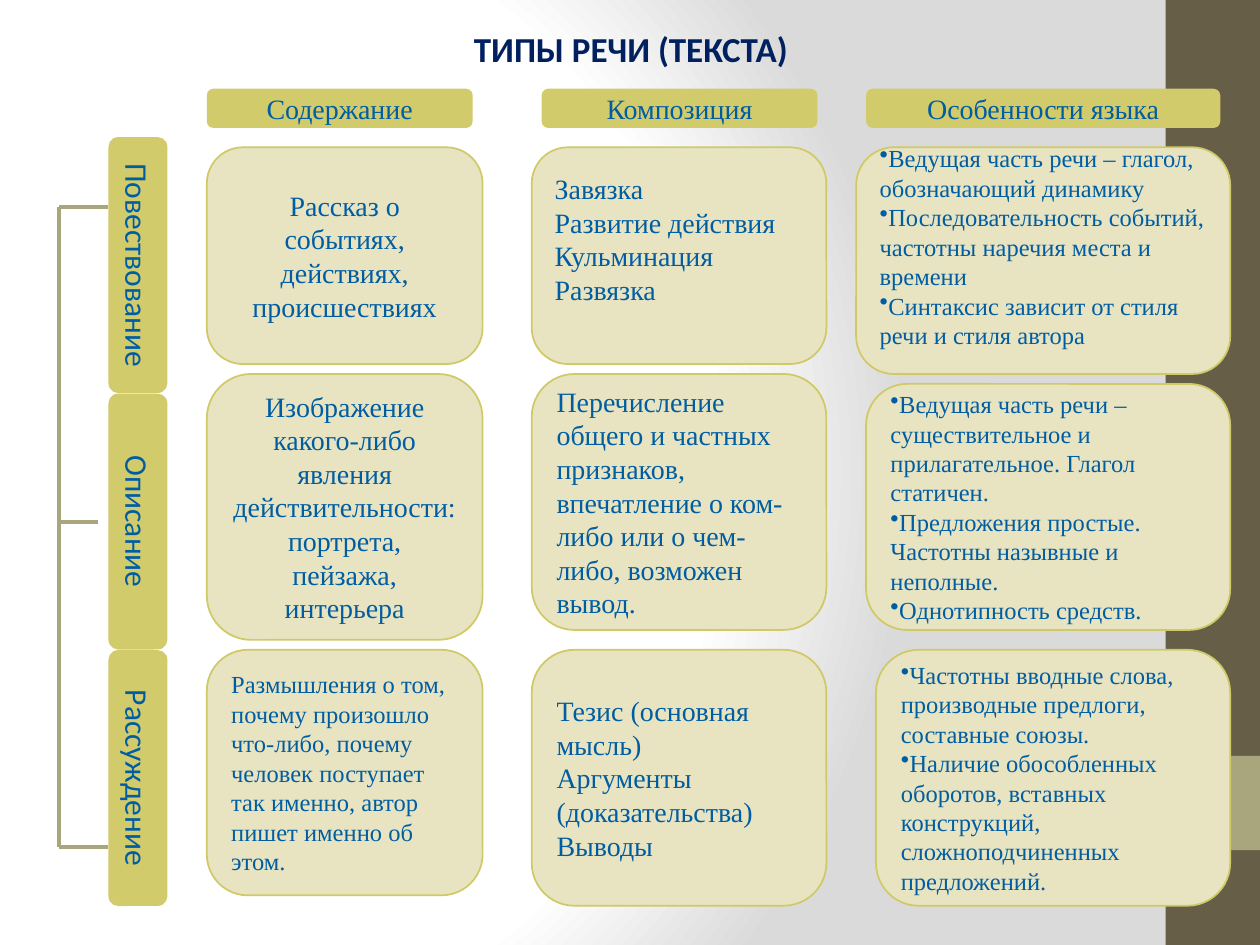
from pptx import Presentation
from pptx.dml.color import RGBColor
from pptx.enum.shapes import MSO_CONNECTOR, MSO_SHAPE
from pptx.enum.text import MSO_ANCHOR, MSO_AUTO_SIZE, PP_ALIGN
from pptx.oxml import parse_xml
from pptx.oxml.ns import nsdecls
from pptx.util import Cm, Pt
from lxml import etree

RECTANGLE = MSO_SHAPE.RECTANGLE
ROUNDED = MSO_SHAPE.ROUNDED_RECTANGLE
STRAIGHT = MSO_CONNECTOR.STRAIGHT
CENTER = PP_ALIGN.CENTER
LEFT = PP_ALIGN.LEFT
MIDDLE = MSO_ANCHOR.MIDDLE
NO_AUTO_SIZE = MSO_AUTO_SIZE.NONE

BROWN = RGBColor(0x67, 0x5E, 0x47)
SAGE = RGBColor(0xA9, 0xA5, 0x7C)
NAVY = RGBColor(0x00, 0x20, 0x60)
BLUE = RGBColor(0x00, 0x5D, 0xA2)
OLIVE = RGBColor(0xD2, 0xCB, 0x6C)
OLIVE_LINE = RGBColor(0xD0, 0xC9, 0x67)
CREAM = RGBColor(0xE8, 0xE4, 0xC1)
SERIF = "Times New Roman"
SANS = "Calibri"
DRAWING = "{http://schemas.openxmlformats.org/drawingml/2006/main}"


def write_text(shape, text, size=16, font=SERIF, color=BLUE, bold=False,
               align=CENTER, bullet=False, wrap=True):
    frame = shape.text_frame
    frame.word_wrap = wrap
    frame.auto_size = NO_AUTO_SIZE
    frame.vertical_anchor = MIDDLE
    frame.text = text
    for paragraph in frame.paragraphs:
        paragraph.alignment = align
        paragraph.font.size = Pt(size)
        for run in paragraph.runs:
            run.font.size = Pt(size)
            run.font.name = font
            run.font.bold = bold
            run.font.color.rgb = color
        if bullet:
            properties = paragraph._p.get_or_add_pPr()
            mark = etree.Element(DRAWING + "buChar", char="•")
            properties.insert_element_before(mark, "a:tabLst", "a:defRPr", "a:extLst")


def add_block(kind, left, top, width, height, fill, line=None):
    shape = slide.shapes.add_shape(kind, Cm(left), Cm(top), Cm(width), Cm(height))
    shape.shadow.inherit = False
    shape.fill.solid()
    shape.fill.fore_color.rgb = fill
    if line is None:
        shape.line.fill.background()
    else:
        shape.line.color.rgb = line
        shape.line.width = Pt(1)
    return shape


presentation = Presentation()
presentation.slide_width = Cm(25.4)
presentation.slide_height = Cm(19.05)
slide = presentation.slides.add_slide(presentation.slide_layouts[5])

background = parse_xml(
    f'<p:bg {nsdecls("p", "a")}><p:bgPr><a:gradFill rotWithShape="1"><a:gsLst>'
    '<a:gs pos="0"><a:srgbClr val="FFFFFF"/></a:gs>'
    '<a:gs pos="75000"><a:srgbClr val="FFFFFF"/></a:gs>'
    '<a:gs pos="100000"><a:srgbClr val="DADADA"/></a:gs></a:gsLst>'
    '<a:path path="circle"><a:fillToRect l="20000" t="50000" r="100000" b="50000"/></a:path>'
    '</a:gradFill><a:effectLst/></p:bgPr></p:bg>')
slide.element.cSld.insert(0, background)

add_block(RECTANGLE, 23.5, 0, 1.9, 19.05, BROWN)
add_block(RECTANGLE, 23.5, 15.24, 1.9, 1.9, SAGE)

title = slide.shapes.title
title.left, title.top, title.width, title.height = Cm(8.53), Cm(0.41), Cm(8.38), Cm(1.12)
write_text(title, "ТИПЫ РЕЧИ (ТЕКСТА)", size=20, font=SANS, color=NAVY, bold=True, wrap=False)

bracket_lines = [
    (1.19, 17.07, 1.19, 4.17),
    (1.19, 4.17, 2.18, 4.17),
    (1.19, 17.07, 2.18, 17.07),
    (1.19, 10.52, 1.98, 10.52),
]
for ends in bracket_lines:
    connector = slide.shapes.add_connector(STRAIGHT, *[Cm(value) for value in ends])
    connector.line.color.rgb = SAGE
    connector.line.width = Pt(2)
    etree.SubElement(connector._element.spPr, DRAWING + "effectLst")

for row, name in enumerate(["Повествование", "Описание", "Рассуждение"]):
    label = add_block(ROUNDED, 0.2, 4.75 + 5.17 * row, 5.16, 1.19, OLIVE)
    label.rotation = 90
    write_text(label, name, size=18, font=SANS)

headings = [
    ("Содержание", 4.17, 5.36),
    ("Композиция", 10.92, 5.56),
    ("Особенности языка", 17.46, 7.14),
]
for name, left, width in headings:
    write_text(add_block(ROUNDED, left, 1.79, width, 0.79, OLIVE), name)

content = {"left": 4.17, "width": 5.56}
composition = {"left": 10.72, "width": 5.94}
centered = {"size": 16, "align": CENTER}
plain = {"size": 16, "align": LEFT}
small = {"size": 14, "align": LEFT}
bulleted = {"size": 14, "align": LEFT, "bullet": True}
cards = [
    (content, 2.97, 4.37, 0.13, centered,
     ["Рассказ о событиях, действиях,", "происшествиях"]),
    (content, 7.54, 5.36, 0.13, centered,
     ["Изображение какого-либо явления действительности:",
      "портрета,", "пейзажа,", "интерьера"]),
    (content, 13.1, 4.95, 0.13, small,
     ["Размышления о том, почему произошло что-либо, почему человек "
      "поступает так именно, автор пишет именно об этом."]),
    (composition, 2.97, 4.37, 0.8, plain,
     ["Завязка", "Развитие действия", "Кульминация", "Развязка"]),
    (composition, 7.54, 5.16, 0.13, plain,
     ["Перечисление общего и частных признаков, впечатление о ком-либо "
      "или о чем-либо, возможен вывод."]),
    (composition, 13.1, 5.16, 0.13, plain,
     ["Тезис (основная мысль)", "Аргументы (доказательства)", "Выводы"]),
    ({"left": 17.26, "width": 7.54}, 2.97, 4.57, 0.7, bulleted,
     ["Ведущая часть речи – глагол, обозначающий динамику",
      "Последовательность событий, частотны наречия места и времени",
      "Синтаксис зависит от стиля речи и стиля автора"]),
    ({"left": 17.46, "width": 7.34}, 7.74, 4.96, 0.13, bulleted,
     ["Ведущая часть речи – существительное и прилагательное. Глагол статичен.",
      "Предложения простые. Частотны назывные и неполные.",
      "Однотипность средств."]),
    ({"left": 17.66, "width": 7.14}, 13.1, 5.16, 0.13, bulleted,
     ["Частотны вводные слова, производные предлоги, составные союзы.",
      "Наличие обособленных оборотов, вставных конструкций, "
      "сложноподчиненных предложений."]),
]
for column, top, height, bottom_margin, text_format, lines in cards:
    card = add_block(ROUNDED, top=top, height=height, fill=CREAM, line=OLIVE_LINE, **column)
    card.text_frame.margin_bottom = Cm(bottom_margin)
    write_text(card, "\n".join(lines), **text_format)

presentation.save("out.pptx")
